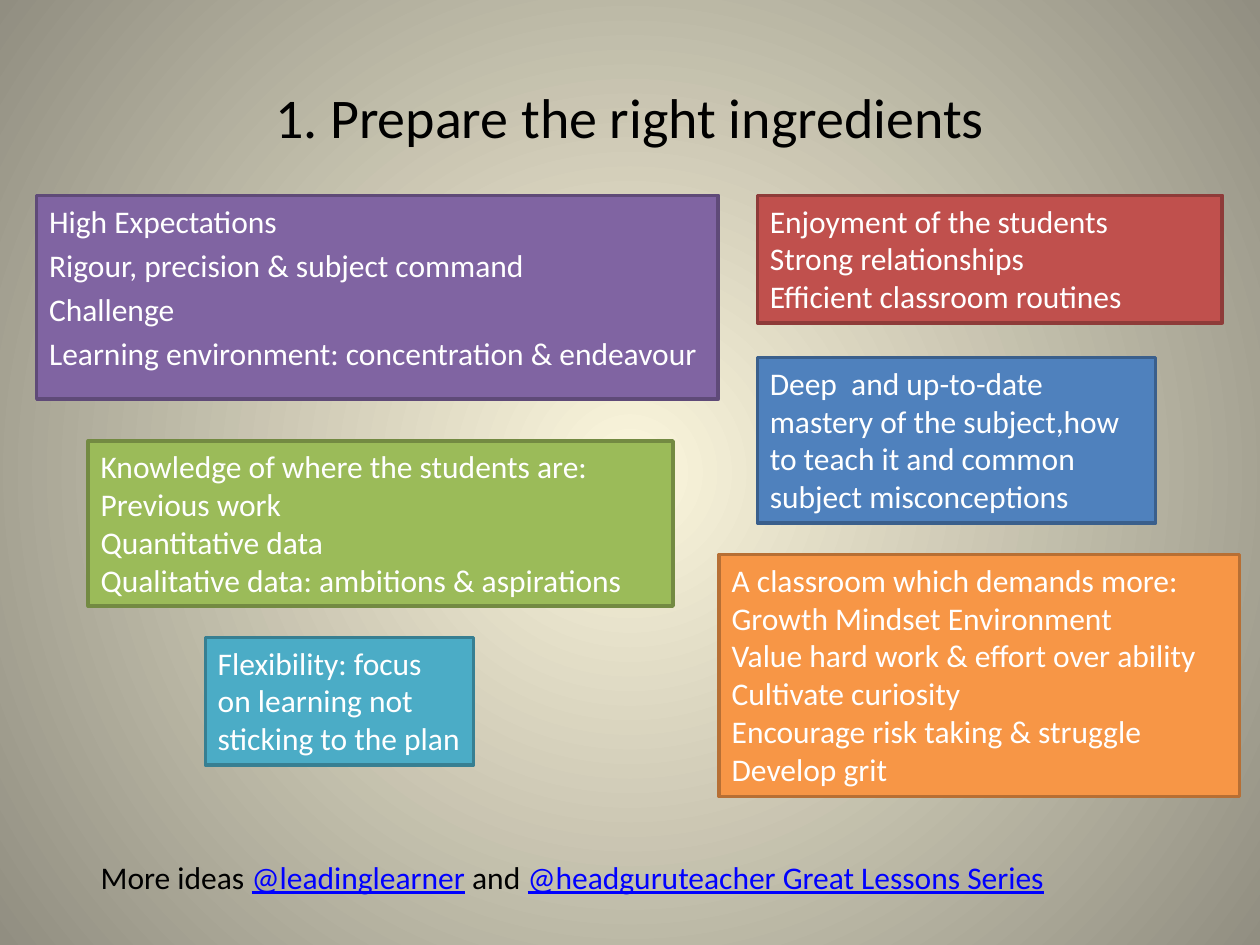
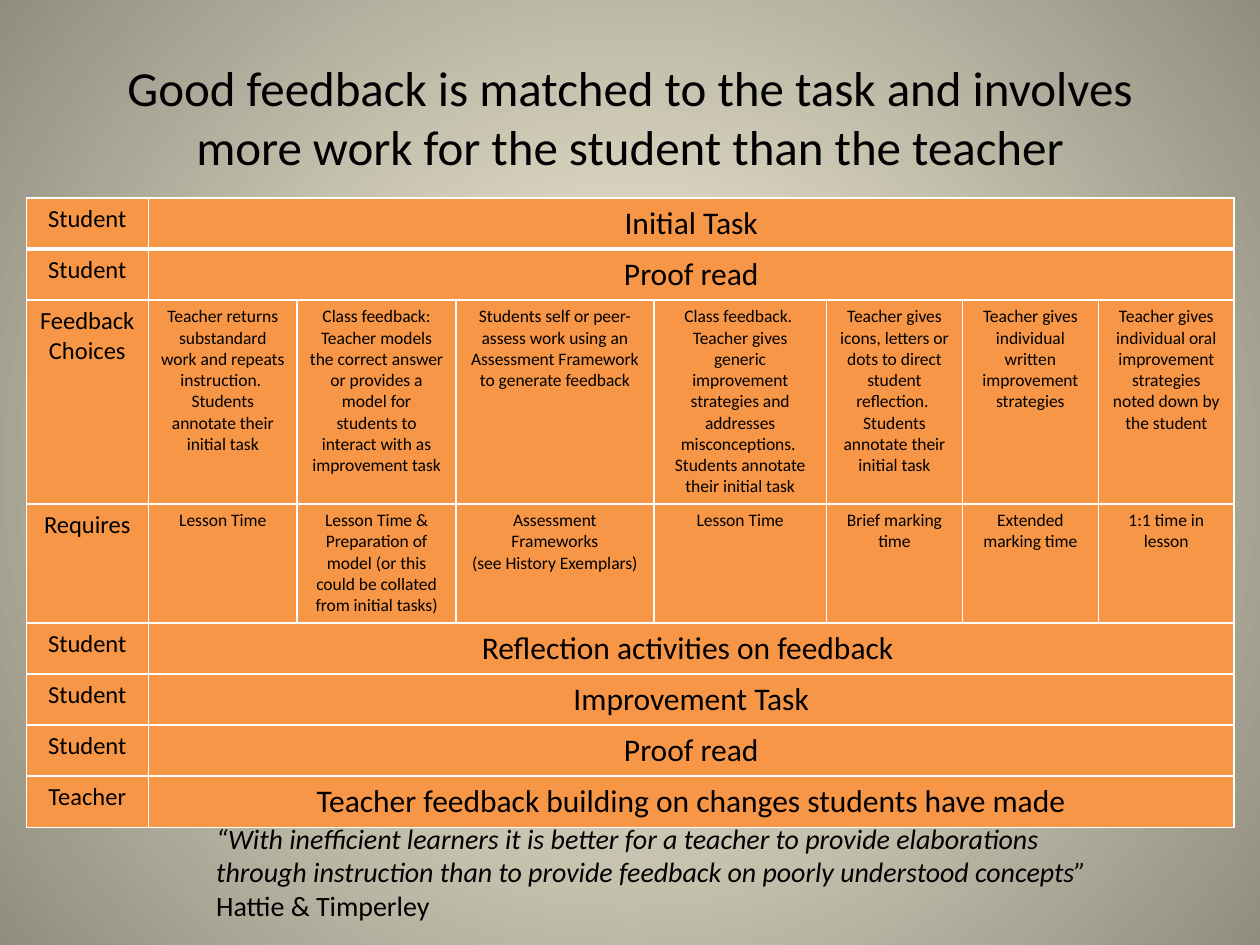
from dataclasses import dataclass

from pptx import Presentation
from pptx.dml.color import RGBColor
from pptx.enum.shapes import MSO_SHAPE
from pptx.enum.text import MSO_ANCHOR, MSO_AUTO_SIZE, PP_ALIGN
from pptx.oxml import parse_xml
from pptx.oxml.ns import nsdecls, qn
from pptx.util import Cm, Pt

BLACK, WHITE, LINK = "000000", "FFFFFF", "0000FF"
ORANGE = "F79646"
GLOW, EDGE = "FCF7DD", "918E81"
TITLE_ONLY = 5
TITLE_PLACE = {"left": Cm(1.27), "top": Cm(0.76), "width": Cm(22.86), "height": Cm(3.18)}
TITLE_FRAME = {"word_wrap": True, "vertical_anchor": MSO_ANCHOR.MIDDLE, "auto_size": MSO_AUTO_SIZE.NONE}
TEXT_FRAME = {"word_wrap": True, "vertical_anchor": MSO_ANCHOR.TOP}


@dataclass(frozen=True)
class Span:
    text: str
    size: float = 18
    colour: str = BLACK
    italic: bool = False
    underline: bool = False


@dataclass(frozen=True)
class Card:
    left: float
    top: float
    width: float
    height: float
    fill: str
    outline: str
    lines: tuple[str, ...]
    gap: float = 0


@dataclass(frozen=True)
class Step:
    label: str
    cells: tuple[str, ...]
    height: float = 1.03


CARDS = (
    Card(0.74, 3.94, 13.74, 4.11, "8064A2", "5F4A78", (
        "High Expectations",
        "Rigour, precision & subject command",
        "Challenge",
        "Learning environment: concentration & endeavour",
    ), gap=3.6),
    Card(1.78, 8.89, 11.79, 3.33, "9BBB59", "738A42", (
        "Knowledge of where the students are:",
        "Previous work",
        "Quantitative data",
        "Qualitative data: ambitions & aspirations",
    )),
    Card(4.14, 12.85, 5.41, 2.57, "4BACC6", "377F92", (
        "Flexibility: focus on learning not sticking to the plan",
    )),
    Card(15.27, 7.21, 8.03, 3.33, "4F81BD", "3A5F8C", (
        "Deep  and up-to-date mastery of the subject,how to teach it and common subject misconceptions",
    )),
    Card(15.27, 3.94, 9.37, 2.57, "C0504D", "8E3B39", (
        "Enjoyment of the students",
        "Strong relationships",
        "Efficient classroom routines",
    )),
    Card(14.5, 11.18, 10.49, 4.88, ORANGE, "B76F34", (
        "A classroom which demands more:",
        "Growth Mindset Environment",
        "Value hard work & effort over ability",
        "Cultivate curiosity",
        "Encourage risk taking & struggle",
        "Develop grit",
    )),
)

COLUMN_WIDTHS = (2.46, 3.0, 3.2, 3.99, 3.48, 2.74, 2.74, 2.74)
STEPS = (
    Step("Student", ("Initial Task",)),
    Step("Student", ("Proof read",)),
    Step("Feedback\nChoices", (
        "Teacher returns substandard work and repeats instruction.  Students annotate their initial task",
        "Class feedback: Teacher models the correct answer or provides a model for students to "
        "interact with as improvement task",
        "Students self or peer-assess work using an Assessment Framework to generate feedback",
        "Class feedback.  Teacher gives generic improvement strategies and addresses "
        "misconceptions.  Students annotate their initial task",
        "Teacher gives icons, letters or dots to direct student reflection.  Students annotate "
        "their initial task",
        "Teacher gives individual written improvement strategies",
        "Teacher gives individual oral improvement strategies noted down by the student",
    ), 4.09),
    Step("Requires", (
        "Lesson Time",
        "Lesson Time & Preparation of model (or this could be collated from initial tasks)",
        "Assessment Frameworks\n(see History Exemplars)",
        "Lesson Time",
        "Brief marking time",
        "Extended marking time",
        "1:1 time in lesson",
    ), 2.4),
    Step("Student", ("Reflection activities on feedback ",)),
    Step("Student", ("Improvement Task",)),
    Step("Student", ("Proof read",)),
    Step("Teacher", ("Teacher feedback building on changes students have made",)),
)


def colour(value: str) -> RGBColor:
    return RGBColor.from_string(value)


def apply(target, values: dict) -> None:
    for name, value in values.items():
        setattr(target, name, value)


def write(frame, lines: list[list[Span]], align=PP_ALIGN.LEFT, gap: float = 0) -> None:
    for index, spans in enumerate(lines):
        para = frame.add_paragraph() if index else frame.paragraphs[0]
        apply(para, {"alignment": align, "space_before": Pt(gap if index else 0)})
        for span in spans:
            run = para.add_run()
            run.text = span.text
            apply(run.font, {
                "name": "Calibri", "size": Pt(span.size), "bold": False,
                "italic": span.italic, "underline": span.underline,
            })
            run.font.color.rgb = colour(span.colour)


def paint_background(master) -> None:
    fill = master.background.fill
    fill.gradient()
    for stop, shade, position in zip(fill.gradient_stops, (GLOW, EDGE), (0, 1)):
        stop.color.rgb = colour(shade)
        stop.position = position
    gradient = master.element.find(".//" + qn("a:gradFill"))
    gradient.remove(gradient.find(qn("a:lin")))
    gradient.append(parse_xml(
        f'<a:path {nsdecls("a")} path="circle">'
        '<a:fillToRect l="50000" t="50000" r="50000" b="50000"/></a:path>'
    ))


def add_page(deck, title: str, size: float):
    page = deck.slides.add_slide(deck.slide_layouts[TITLE_ONLY])
    heading = page.shapes.title
    apply(heading, TITLE_PLACE)
    apply(heading.text_frame, TITLE_FRAME)
    write(heading.text_frame, [[Span(title, size)]], PP_ALIGN.CENTER)
    return page


def add_card(page, card: Card) -> None:
    place = (Cm(card.left), Cm(card.top), Cm(card.width), Cm(card.height))
    box = page.shapes.add_shape(MSO_SHAPE.RECTANGLE, *place)
    box.shadow.inherit = False
    box.fill.solid()
    box.fill.fore_color.rgb = colour(card.fill)
    box.line.color.rgb = colour(card.outline)
    box.line.width = Pt(2)
    apply(box.text_frame, TEXT_FRAME)
    write(box.text_frame, [[Span(line, colour=WHITE)] for line in card.lines], gap=card.gap)


def add_note(page, left: float, top: float, width: float, height: float, spans: list[Span]) -> None:
    box = page.shapes.add_textbox(Cm(left), Cm(top), Cm(width), Cm(height))
    apply(box.text_frame, TEXT_FRAME)
    write(box.text_frame, [spans])


def style_cell(cell, top: float, bottom: float) -> None:
    properties = cell._tc.get_or_add_tcPr()
    for side, width in {"L": 1, "R": 1, "T": top, "B": bottom}.items():
        properties.append(parse_xml(
            f'<a:ln{side} {nsdecls("a")} w="{Pt(width)}"><a:solidFill>'
            f'<a:srgbClr val="{WHITE}"/></a:solidFill></a:ln{side}>'
        ))
    cell.fill.solid()
    cell.fill.fore_color.rgb = colour(ORANGE)


def fill_cell(cell, text: str, size: float) -> None:
    write(cell.text_frame, [[Span(line, size)] for line in text.split("\n")], PP_ALIGN.CENTER)


def add_steps(page, left: float, top: float) -> None:
    width, height = sum(COLUMN_WIDTHS), sum(step.height for step in STEPS)
    table = page.shapes.add_table(
        len(STEPS), len(COLUMN_WIDTHS), Cm(left), Cm(top), Cm(width), Cm(height)
    ).table
    apply(table, {"first_row": False, "horz_banding": False})
    for column, column_width in zip(table.columns, COLUMN_WIDTHS):
        column.width = Cm(column_width)
    for index, step in enumerate(STEPS):
        table.rows[index].height = Cm(step.height)
        cells = [table.cell(index, column) for column in range(len(COLUMN_WIDTHS))]
        for cell in cells:
            style_cell(cell, top=3 if index == 1 else 1, bottom=3 if index == 0 else 1)
        merged = len(step.cells) == 1
        if merged:
            cells[1].merge(cells[-1])
        fill_cell(cells[0], step.label, 14)
        for cell, text in zip(cells[1:], step.cells):
            fill_cell(cell, text, 18 if merged else 10)


def main() -> None:
    deck = Presentation()
    apply(deck, {"slide_width": Cm(25.4), "slide_height": Cm(19.05)})
    paint_background(deck.slide_master)

    ingredients = add_page(deck, "1. Prepare the right ingredients", 32)
    for card in CARDS:
        add_card(ingredients, card)
    add_note(ingredients, 1.78, 17.17, 22.86, 1.02, [
        Span("More ideas "),
        Span("@leadinglearner", colour=LINK, underline=True),
        Span(" and "),
        Span("@headguruteacher Great Lessons Series", colour=LINK, underline=True),
    ])

    feedback = add_page(
        deck,
        "Good feedback is matched to the task and involves more work for the student than the teacher",
        28,
    )
    add_steps(feedback, 0.53, 3.99)
    add_note(feedback, 4.11, 16.43, 19.02, 2.31, [
        Span("“With inefficient learners it is better for a teacher to provide elaborations through "
             "instruction than to provide feedback on poorly understood concepts” ", 16, italic=True),
        Span("Hattie & Timperley", 16),
    ])
    deck.save("out.pptx")


if __name__ == "__main__":
    main()
